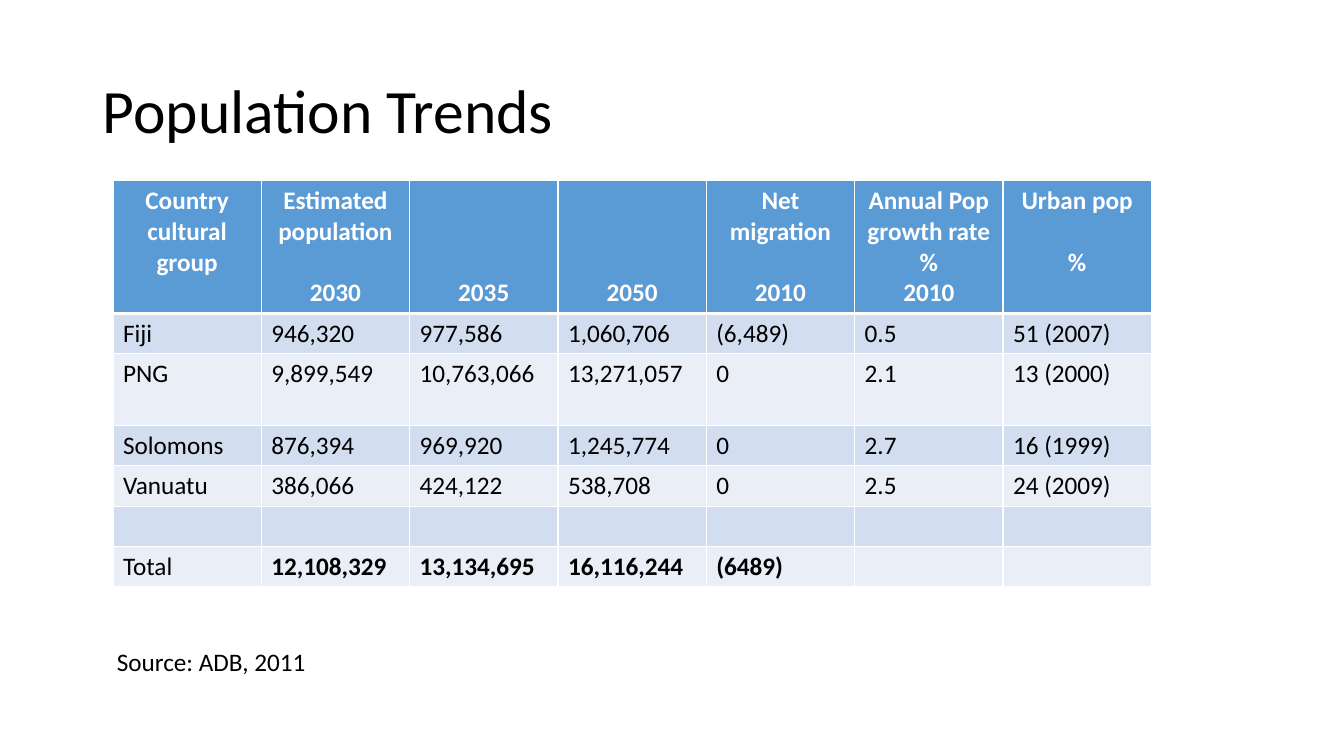
from lxml import etree
from pptx import Presentation
from pptx.dml.color import RGBColor
from pptx.enum.text import MSO_ANCHOR, PP_ALIGN
from pptx.oxml.ns import qn
from pptx.util import Inches, Pt

CENTER, LEFT = PP_ALIGN.CENTER, PP_ALIGN.LEFT
TOP, MIDDLE, BOTTOM = MSO_ANCHOR.TOP, MSO_ANCHOR.MIDDLE, MSO_ANCHOR.BOTTOM

BLACK = RGBColor(0x00, 0x00, 0x00)
WHITE = RGBColor(0xFF, 0xFF, 0xFF)
HEADER_BLUE = RGBColor(0x5B, 0x9B, 0xD5)
BANDS = (RGBColor(0xD2, 0xDE, 0xEF), RGBColor(0xEA, 0xEF, 0xF7))

LINE = 22  # height in points of one 18 pt text line

# Each header is a list of (text, space before in points)
HEADERS = [
    [("Country cultural group", 0)],
    [("Estimated population", 0), ("2030", LINE)],
    [("2035", 0)],
    [("2050", 0)],
    [("Net migration", 0), ("2010", LINE)],
    [("Annual Pop growth rate", 0), ("%", 0), ("2010", 0)],
    [("Urban pop", 0), ("%", LINE)],
]
BOTTOM_HEADERS = (2, 3)
ROWS = [
    ["Fiji", "946,320", "977,586", "1,060,706", "(6,489)", "0.5", "51 (2007)"],
    ["PNG", "9,899,549", "10,763,066", "13,271,057", "0", "2.1", "13 (2000)"],
    ["Solomons", "876,394", "969,920", "1,245,774", "0", "2.7", "16 (1999)"],
    ["Vanuatu", "386,066", "424,122", "538,708", "0", "2.5", "24 (2009)"],
    [""] * 7,
    ["Total", "12,108,329", "13,134,695", "16,116,244", "(6489)", "", ""],
]
ROW_HEIGHTS = [1.32, 0.4, 0.71, 0.4, 0.4, 0.4, 0.4]


class SlideBuilder:
    def __init__(self, s, font="Calibri", size=18):
        self.s, self.font, self.size = s, font, size

    def paragraph(self, tf, text, size=None, color=BLACK, bold=False, align=LEFT,
                  before=0, spacing=None, first=True):
        p = tf.paragraphs[0] if first else tf.add_paragraph()
        p.alignment = align
        if before:
            p.space_before = Pt(before)
        if spacing:
            p.line_spacing = spacing
        if text:
            r = p.add_run()
            r.text = text
            r.font.name = self.font
            r.font.size = Pt(size or self.size)
            r.font.bold = bold
            r.font.color.rgb = color

    def text(self, text, x, y, w, h, anchor=TOP, **fmt):
        sp = self.s.shapes.add_textbox(Inches(x), Inches(y), Inches(w), Inches(h))
        tf = sp.text_frame
        tf.word_wrap = True
        tf.vertical_anchor = anchor
        self.paragraph(tf, text, **fmt)

    def style_cell(self, cell, fill, top=1, bottom=1):
        """Set white borders, widths in points, and a solid fill."""
        tc_pr = cell._tc.get_or_add_tcPr()
        for side, width in (("L", 1), ("R", 1), ("T", top), ("B", bottom)):
            ln = etree.SubElement(tc_pr, qn(f"a:ln{side}"), w=str(Pt(width)))
            solid = etree.SubElement(ln, qn("a:solidFill"))
            etree.SubElement(solid, qn("a:srgbClr"), val=str(WHITE))
        cell.fill.solid()
        cell.fill.fore_color.rgb = fill

    def table(self, headers, rows, heights, x, y, w):
        frame = self.s.shapes.add_table(len(heights), len(headers), Inches(x), Inches(y),
                                        Inches(w), Inches(sum(heights)))
        table = frame.table
        for column in table.columns:
            column.width = Inches(w / len(headers))
        for row, height in zip(table.rows, heights):
            row.height = Inches(height)

        for j, lines in enumerate(headers):
            cell = table.cell(0, j)
            self.style_cell(cell, HEADER_BLUE, bottom=3)
            cell.vertical_anchor = BOTTOM if j in BOTTOM_HEADERS else TOP
            for k, (text, before) in enumerate(lines):
                self.paragraph(cell.text_frame, text, color=WHITE, bold=True,
                               align=CENTER, before=before, first=k == 0)

        for i, values in enumerate(rows):
            for j, value in enumerate(values):
                cell = table.cell(i + 1, j)
                self.style_cell(cell, BANDS[i % 2], top=3 if i == 0 else 1)
                self.paragraph(cell.text_frame, value,
                               bold=values[0] == "Total" and j > 0)


def main():
    prs = Presentation()
    prs.slide_width, prs.slide_height = Inches(13.33), Inches(7.5)
    slide = SlideBuilder(prs.slides.add_slide(prs.slide_layouts[6]))
    slide.text("Population Trends", 0.92, 0.4, 11.5, 1.45, anchor=MIDDLE,
               size=44, spacing=0.9)
    slide.table(HEADERS, ROWS, ROW_HEIGHTS, 1.12, 1.79, 10.3)
    slide.text("Source: ADB, 2011", 1.06, 6.36, 2.42, 0.4)
    prs.save("out.pptx")


if __name__ == "__main__":
    main()
